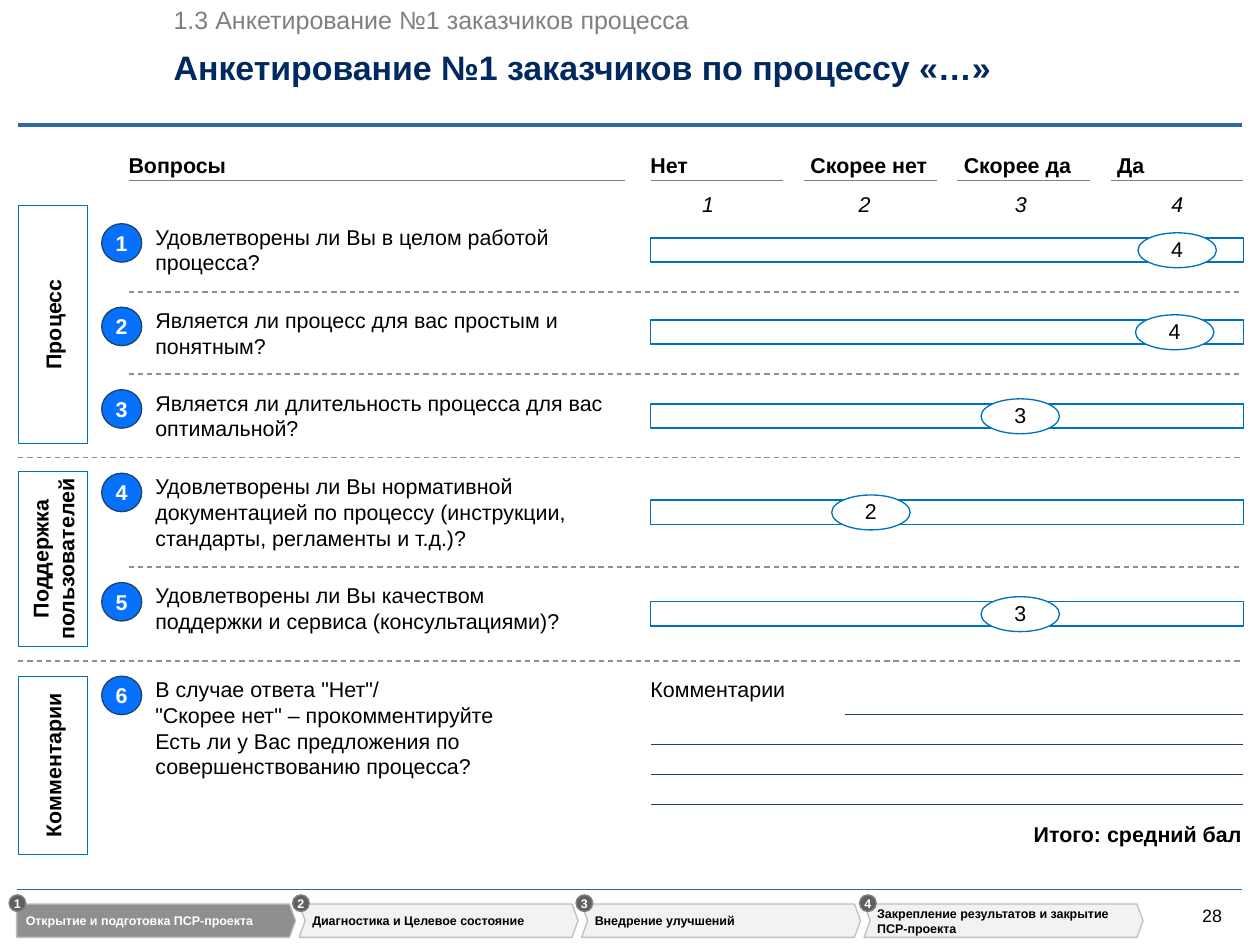
"""Builds the customer survey slide of a process project."""
import pptx
import pptx.dml.color
import pptx.enum.dml
import pptx.enum.shapes
import pptx.enum.text
import pptx.oxml.ns
import pptx.util
from lxml import etree

RGBColor = pptx.dml.color.RGBColor
Cm = pptx.util.Cm
Pt = pptx.util.Pt
Align = pptx.enum.text.PP_ALIGN
Anchor = pptx.enum.text.MSO_ANCHOR
Kind = pptx.enum.shapes.MSO_SHAPE

BLACK = RGBColor(0x00, 0x00, 0x00)
WHITE = RGBColor(0xFF, 0xFF, 0xFF)
NAVY = RGBColor(0x00, 0x29, 0x60)
STEEL = RGBColor(0x2E, 0x69, 0xA5)
DEEP = RGBColor(0x1C, 0x43, 0x6A)
BLUE = RGBColor(0x00, 0x70, 0xC0)
BRIGHT = RGBColor(0x07, 0x71, 0xFF)
GRAY = RGBColor(0x80, 0x80, 0x80)
DASH = RGBColor(0x8F, 0x8F, 0x8F)
DARK = RGBColor(0x60, 0x60, 0x60)
PALE = RGBColor(0xF2, 0xF2, 0xF2)
EDGE = RGBColor(0xBF, 0xBF, 0xBF)

LEFT, START, SCALE, RIGHT = 0.36, 2.54, 12.85, 24.56

QUESTIONS = [
    (4.42, "Удовлетворены ли Вы в целом работой процесса?"),
    (6.07, "Является ли процесс для вас простым и понятным?"),
    (7.7, "Является ли длительность процесса для вас оптимальной?"),
    (9.35, "Удовлетворены ли Вы нормативной документацией по процессу "
           "(инструкции, стандарты, регламенты и т.д.)?"),
    (11.51, "Удовлетворены ли Вы качеством\vподдержки и сервиса (консультациями)?"),
    (13.36, "В случае ответа \"Нет\"/\v\"Скорее нет\" – прокомментируйте\n"
            "Есть ли у Вас предложения по совершенствованию процесса?"),
]
ANSWERS = [(4.7, 22.48, "4"), (6.32, 22.43, "4"), (7.98, 19.38, "3"),
           (9.88, 16.43, "2"), (11.89, 19.38, "3")]
GROUPS = [(4.06, 4.7, "Процесс"), (9.32, 3.45, "Поддержка пользователей"),
          (13.36, 3.51, "Комментарии")]
BREAKS = [(START, 5.77), (START, 7.39), (LEFT, 9.04), (START, 11.2), (LEFT, 13.06)]
GRADES = ["Нет", "Скорее нет", "Скорее да", "Да"]
STEPS = ["Открытие и подготовка ПСР-проекта", "Диагностика и Целевое состояние",
         "Внедрение улучшений", "Закрепление результатов и закрытие ПСР-проекта"]


class Deck:
    """Holds the font and the current slide and draws each kind of element."""

    def __init__(self):
        self.file = pptx.Presentation()
        self.file.slide_width, self.file.slide_height = Cm(24.89), Cm(18.67)
        self.slide = self.file.slides.add_slide(self.file.slide_layouts[5])
        self.shapes = self.slide.shapes
        self.font = "Arial"

    def letter(self, shape, text, size=12, color=BLACK, bold=False, slant=False,
               align=Align.LEFT, anchor=Anchor.TOP, pad=(0, 0, 0, 0), wrap=True,
               space=1.0):
        """Fills a shape with styled text."""
        frame = shape.text_frame
        frame.text = text
        frame.word_wrap = wrap
        frame.vertical_anchor = anchor
        (frame.margin_left, frame.margin_top,
         frame.margin_right, frame.margin_bottom) = [Cm(side) for side in pad]
        for para in frame.paragraphs:
            para.alignment = align
            para.line_spacing = space
            para.space_before = Pt(0)
            for run in para.runs:
                run.font.name, run.font.size = self.font, Pt(size)
                run.font.bold, run.font.italic = bold, slant
                run.font.color.rgb = color
        return shape

    def title(self, text, left, top, width, height):
        """Moves and fills the title placeholder."""
        shape = self.shapes.title
        shape.left, shape.top = Cm(left), Cm(top)
        shape.width, shape.height = Cm(width), Cm(height)
        self.letter(shape, text, 19, NAVY, True, anchor=Anchor.MIDDLE)

    def label(self, text, left, top, width, height, **style):
        """Adds a text box."""
        box = self.shapes.add_textbox(Cm(left), Cm(top), Cm(width), Cm(height))
        return self.letter(box, text, **style)

    def paint(self, shape, fill, edge, weight=0.75):
        """Sets the fill and outline of a shape."""
        shape.shadow.inherit = False
        shape.fill.solid()
        shape.fill.fore_color.rgb = fill
        shape.line.color.rgb = edge
        shape.line.width = Pt(weight)
        return shape

    def form(self, kind, left, top, width, height, fill, edge, weight=0.75):
        """Adds a preset shape."""
        shape = self.shapes.add_shape(kind, Cm(left), Cm(top), Cm(width), Cm(height))
        return self.paint(shape, fill, edge, weight)

    def oval(self, text, left, top, width, height, fill, edge, **style):
        """Adds an ellipse with centred text."""
        shape = self.form(Kind.OVAL, left, top, width, height, fill, edge)
        self.letter(shape, text, align=Align.CENTER, anchor=Anchor.MIDDLE,
                    wrap=False, **style)

    def side(self, text, top, height):
        """Adds a group frame with upward text."""
        shape = self.form(Kind.RECTANGLE, LEFT, top, 1.37, height, WHITE, BLUE, 0.25)
        self.letter(shape, text, bold=True, align=Align.CENTER, anchor=Anchor.MIDDLE,
                    pad=(0.25, 0.13, 0.25, 0.13))
        shape.element.txBody.bodyPr.set("vert", "vert270")

    def rule(self, left, right, top, color, weight=0.75, dash=False):
        """Adds a level line."""
        line = self.shapes.add_connector(pptx.enum.shapes.MSO_CONNECTOR.STRAIGHT,
                                         Cm(left), Cm(top), Cm(right), Cm(top))
        line.line.color.rgb = color
        line.line.width = Pt(weight)
        if dash:
            line.line.dash_style = pptx.enum.dml.MSO_LINE.DASH
        etree.SubElement(line.element.spPr, pptx.oxml.ns.qn("a:effectLst"))

    def head(self, text, left, width, pad=0):
        """Adds an underlined column heading."""
        self.rule(left, left + width, 3.56, GRAY)
        self.label(text, left, 3, width, 0.56, bold=True, anchor=Anchor.BOTTOM,
                   pad=(pad, 0, 0, 0.05))

    def step(self, text, left, notch, fill, color):
        """Adds one arrow of the footer chain."""
        top, mid, base = 17.86, 18.19, 18.52
        points = [(left + 5.39, top), (left + 5.51, mid), (left + 5.39, base),
                  (left, base), (left + notch, mid)]
        arrow = self.shapes.build_freeform(Cm(left), Cm(top), scale=1.0)
        arrow.add_line_segments([(Cm(x), Cm(y)) for x, y in points], close=True)
        shape = self.paint(arrow.convert_to_shape(), fill, EDGE)
        self.letter(shape, text, 7, color, True, anchor=Anchor.MIDDLE,
                    pad=(0.18 + notch * 0.67, 0, 0.13, 0))


def main():
    deck = Deck()
    deck.rule(0.33, 24.54, 17.58, STEEL)
    deck.rule(LEFT, 24.54, 2.46, STEEL, 2.25)
    deck.label("28", 23.75, 17.88, 0.58, 0.43, size=10, anchor=Anchor.MIDDLE, wrap=False)
    deck.label("1.3 Анкетирование №1 заказчиков процесса", 3.43, 0.08, 10.26, 0.61,
               size=14, color=GRAY, wrap=False)
    deck.title("Анкетирование №1 заказчиков по процессу «…»", 3.43, 0.91, 18.57, 0.81)

    deck.head("Вопросы", START, 9.8)
    for spot, grade in enumerate(GRADES):
        deck.head(grade, SCALE + 3.03 * spot, 2.62, 0.13 if spot else 0)
        deck.label(str(spot + 1), 13.87 + 3.09 * spot, 3.84, 0.23, 0.46,
                   slant=True, wrap=False, space=0.9)

    for left, top in BREAKS:
        deck.rule(left, RIGHT, top, DASH, dash=True)
    for top, height, text in GROUPS:
        deck.side(text, top, height)
    for count, (top, text) in enumerate(QUESTIONS, 1):
        deck.label(text, 3.07, top, 9.27, 1.02)
        deck.oval(str(count), 2.01, top, 0.79, 0.76, BRIGHT, DEEP,
                  color=WHITE, bold=True)
    for top, left, mark in ANSWERS:
        deck.form(Kind.RECTANGLE, SCALE, top, RIGHT - SCALE, 0.48, WHITE, BLUE)
        deck.oval(mark, left, top - 0.1, 1.55, 0.69, WHITE, BLUE, space=0.9)

    deck.label("Комментарии", SCALE, 13.36, 3.53, 0.51)
    for row in range(4):
        deck.rule(SCALE if row else 16.69, RIGHT, 14.12 + 0.59 * row, DEEP)
    deck.label("Итого: средний бал", 20.42, 16.23, 4.24, 0.51, bold=True)

    for spot, text in enumerate(STEPS):
        fill, color = (PALE, BLACK) if spot else (DASH, WHITE)
        deck.step(text, 0.33 + 5.58 * spot, 0.12 if spot else 0, fill, color)
        deck.oval(str(spot + 1), 0.18 + 5.6 * spot, 17.68, 0.33, 0.33, DARK, GRAY,
                  size=7, color=WHITE, bold=True)
    deck.file.save("out.pptx")


if __name__ == "__main__":
    main()
